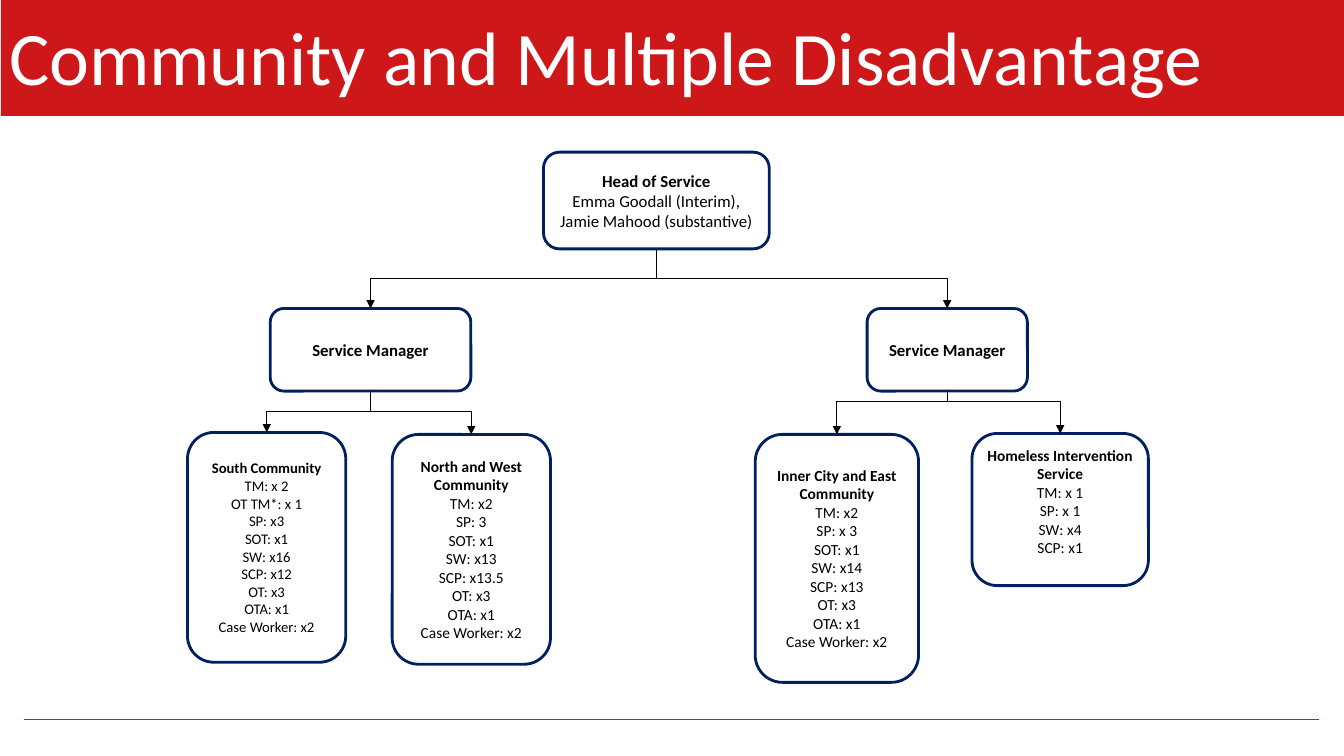
from dataclasses import dataclass

from lxml import etree
from pptx import Presentation
from pptx.dml.color import RGBColor
from pptx.enum.shapes import MSO_CONNECTOR, MSO_SHAPE
from pptx.enum.text import MSO_ANCHOR, PP_ALIGN
from pptx.oxml.ns import qn
from pptx.util import Inches, Pt

ELBOW, STRAIGHT = MSO_CONNECTOR.ELBOW, MSO_CONNECTOR.STRAIGHT
RECT, ROUNDED = MSO_SHAPE.RECTANGLE, MSO_SHAPE.ROUNDED_RECTANGLE
TOP, MIDDLE = MSO_ANCHOR.TOP, MSO_ANCHOR.MIDDLE
LEFT, CENTER = PP_ALIGN.LEFT, PP_ALIGN.CENTER


@dataclass(frozen=True)
class Theme:
    font: str = "Calibri"
    band: RGBColor = RGBColor(0xCD, 0x17, 0x19)
    rule: RGBColor = RGBColor(0xCB, 0x17, 0x19)
    border: RGBColor = RGBColor(0x00, 0x20, 0x60)
    ink: RGBColor = RGBColor(0, 0, 0)
    paper: RGBColor = RGBColor(0xFF, 0xFF, 0xFF)
    title_size: float = 54
    manager_size: float = 12
    team_size: float = 11
    small_team_size: float = 10.5


THEME = Theme()


@dataclass(frozen=True)
class Box:
    left: float
    top: float
    width: float
    height: float

    @property
    def center(self):
        return self.left + self.width / 2

    @property
    def bottom(self):
        return self.top + self.height

    def lengths(self):
        return [Inches(v) for v in (self.left, self.top, self.width, self.height)]


HEAD = Box(5.39, 1.51, 2.24, 0.96)
WEST_MANAGER = Box(2.68, 3.06, 1.99, 0.82)
EAST_MANAGER = Box(8.6, 3.06, 1.59, 0.82)
SOUTH = Box(1.86, 4.29, 1.57, 2.28)
NORTH_WEST = Box(3.89, 4.31, 1.57, 2.28)
INNER_EAST = Box(7.49, 4.31, 1.62, 2.46)
HOMELESS = Box(9.64, 4.3, 1.75, 1.51)

TEAMS = [
    (SOUTH, THEME.small_team_size, "South Community",
     ["TM: x 2", "OT TM*: x 1", "SP: x3", "SOT: x1", "SW: x16", "SCP: x12",
      "OT: x3", "OTA: x1", "Case Worker: x2"]),
    (NORTH_WEST, THEME.team_size, "North and West Community",
     ["TM: x2", "SP: 3", "SOT: x1", "SW: x13", "SCP: x13.5", "OT: x3",
      "OTA: x1", "Case Worker: x2"]),
    (INNER_EAST, THEME.team_size, "Inner City and East Community",
     ["TM: x2", "SP: x 3", "SOT: x1", "SW: x14", "SCP: x13", "OT: x3",
      "OTA: x1", "Case Worker: x2"]),
]

# Parent, children, and the height of the bar that joins them
BRANCHES = [
    (HEAD, (WEST_MANAGER, EAST_MANAGER), 2.76),
    (WEST_MANAGER, (SOUTH, NORTH_WEST), 4.08),
    (EAST_MANAGER, (INNER_EAST, HOMELESS), 3.98),
]


def style_paragraph(paragraph, size, color, bold=False, align=CENTER):
    paragraph.alignment = align
    font = paragraph.font
    font.name, font.size, font.bold = THEME.font, Pt(size), bold
    font.color.rgb = color


def add_line(slide, kind, start, end, color, weight):
    line = slide.shapes.add_connector(kind, *[Inches(v) for v in (*start, *end)])
    line.line.color.rgb = color
    line.line.width = Pt(weight)
    etree.SubElement(line.element.spPr, qn("a:effectLst"))
    return line


def add_header(slide, box):
    band = slide.shapes.add_shape(RECT, *box.lengths())
    band.shadow.inherit = False
    band.fill.solid()
    band.fill.fore_color.rgb = THEME.band
    band.line.fill.background()

    title = slide.shapes.title
    title.element.addprevious(band.element)
    title.left, title.top, title.width, title.height = Box(
        box.left - 0.01, box.top + 0.05, 12.67, 1.25).lengths()
    frame = title.text_frame
    frame.text = "Community and Multiple Disadvantage"
    frame.word_wrap = True
    frame.vertical_anchor = TOP
    frame.margin_left = frame.margin_right = Inches(0.09)
    style_paragraph(frame.paragraphs[0], THEME.title_size, THEME.paper, align=LEFT)
    frame.paragraphs[0].line_spacing = 1.0
    frame.paragraphs[0].space_before = Pt(0)


def add_role(slide, box, size, heading, details=(), anchor=MIDDLE, side_margin=0.1):
    """Draw one chart box with a bold heading over plain lines."""
    role = slide.shapes.add_shape(ROUNDED, *box.lengths())
    role.shadow.inherit = False
    role.fill.background()
    role.line.color.rgb = THEME.border
    role.line.width = Pt(2)
    frame = role.text_frame
    frame.word_wrap = True
    frame.vertical_anchor = anchor
    frame.margin_left = frame.margin_right = Inches(side_margin)
    frame.text = "\n".join([heading, *details])
    for index, paragraph in enumerate(frame.paragraphs):
        style_paragraph(paragraph, size, THEME.ink, bold=index == 0)


def add_branch(slide, parent, child, bar):
    """Join parent to child by an arrow that runs down, across at bar, and down."""
    drop = child.top - parent.bottom
    shift = child.center - parent.center
    x = (parent.center + child.center) / 2
    y = (parent.bottom + child.top) / 2
    # The elbow runs sideways first, so it is laid out flat and then turned
    half = drop / 2 if shift > 0 else -drop / 2
    reach = abs(shift) / 2
    arrow = add_line(slide, ELBOW, (x + half, y - reach), (x - half, y + reach),
                     THEME.ink, 0.75)
    properties = arrow.element.spPr
    quarter_turns = 3 if shift > 0 else 1
    properties.find(qn("a:xfrm")).set("rot", str(quarter_turns * 90 * 60000))
    geometry = properties.find(qn("a:prstGeom"))
    adjustments = geometry.find(qn("a:avLst"))
    if adjustments is None:
        adjustments = etree.SubElement(geometry, qn("a:avLst"))
    share = round((bar - parent.bottom) / drop * 100000)
    etree.SubElement(adjustments, qn("a:gd"), name="adj1", fmla=f"val {share}")
    etree.SubElement(properties.find(qn("a:ln")), qn("a:tailEnd"), type="triangle")


def add_organisation(slide):
    add_role(slide, HEAD, THEME.manager_size, "Head of Service",
             ["Emma Goodall (Interim), Jamie Mahood (substantive)"])
    for manager in (WEST_MANAGER, EAST_MANAGER):
        add_role(slide, manager, THEME.manager_size, "Service Manager")
    for team in TEAMS:
        add_role(slide, *team)
    add_role(slide, HOMELESS, THEME.team_size, "Homeless Intervention Service",
             ["TM: x 1", "SP: x 1", "SW: x4", "SCP: x1"], TOP, 0.04)
    for parent, children, bar in BRANCHES:
        for child in children:
            add_branch(slide, parent, child, bar)


def main():
    deck = Presentation()
    deck.slide_width, deck.slide_height = Inches(13.33), Inches(7.5)
    slide = deck.slides.add_slide(deck.slide_layouts.get_by_name("Title Only"))
    add_header(slide, Box(0.01, 0, 13.33, 1.15))
    add_line(slide, STRAIGHT, (0.24, 7.13), (13.08, 7.13), THEME.rule, 0.25)
    add_organisation(slide)
    deck.save("out.pptx")


if __name__ == "__main__":
    main()
